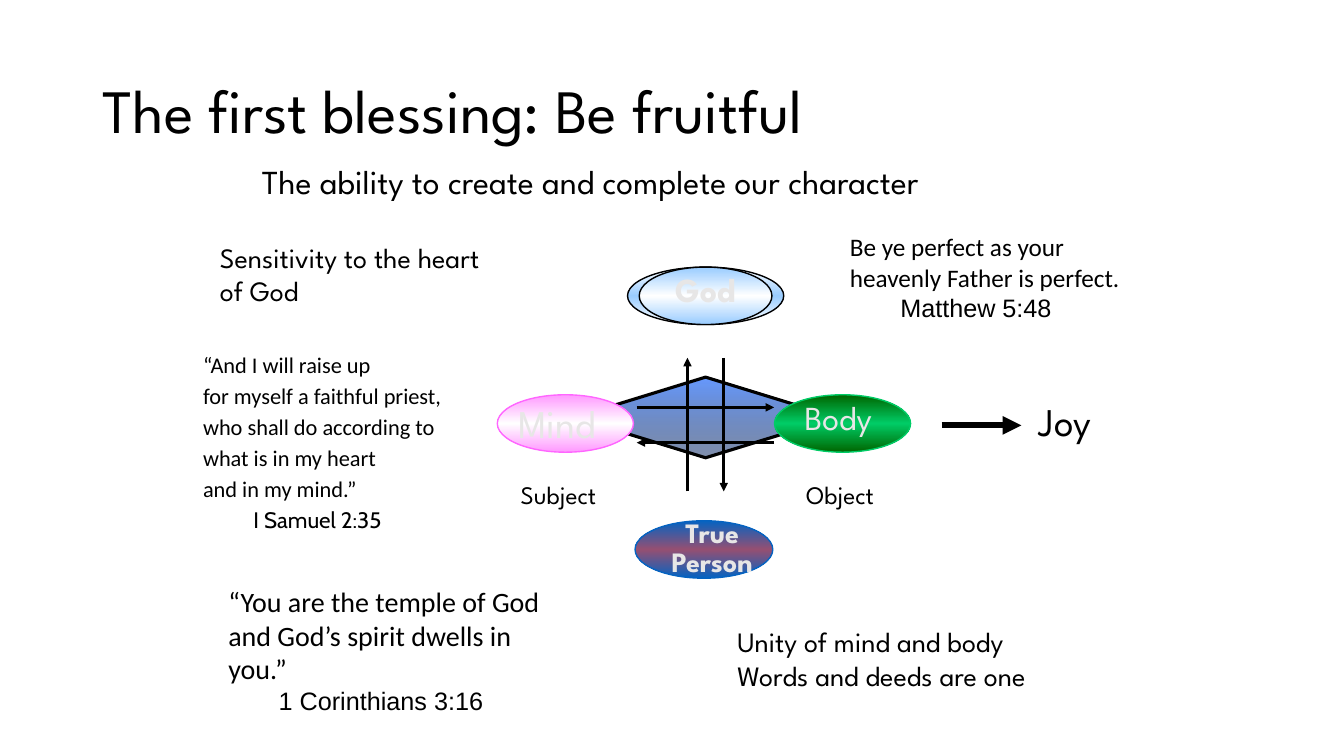
import pptx
import pptx.util
import pptx.dml.color
import pptx.enum.shapes
import pptx.enum.text
import pptx.oxml.ns
import lxml.etree

# Square grid: 160 columns by 90 rows
deck = pptx.Presentation()
deck.slide_width, deck.slide_height = pptx.util.Inches(13.333), pptx.util.Inches(7.5)
cell = deck.slide_height / 90
slide = deck.slides.add_slide(deck.slide_layouts[5])

hex_color = pptx.dml.color.RGBColor.from_string
qn = pptx.oxml.ns.qn
Pt = pptx.util.Pt
SHAPES = pptx.enum.shapes.MSO_SHAPE
ALIGN = pptx.enum.text.PP_ALIGN
AUTO = pptx.enum.text.MSO_AUTO_SIZE
HEADING = "League Spartan"
PALE = "E7E6E6"


def write(frame, paragraphs, size, face=HEADING, color="000000", bold=False, **layout):
    """Each paragraph is a list of parts: text, or (text, face, size)."""
    for number, parts in enumerate(paragraphs):
        paragraph = frame.paragraphs[0] if number == 0 else frame.add_paragraph()
        for name, value in layout.items():
            setattr(paragraph, name, value)
        for part in parts:
            if part == "\n":
                paragraph.add_line_break()
                continue
            words, part_face, part_size = (part, face, size) if isinstance(part, str) else part
            run = paragraph.add_run()
            run.text = words
            run.font.color.rgb = hex_color(color)
            look = {"name": part_face, "size": Pt(part_size), "bold": bold}
            for name, value in look.items():
                setattr(run.font, name, value)


def add_gradient_shape(kind, box, colors, outline, weight, end_alpha=None):
    shape = slide.shapes.add_shape(kind, *[int(v * cell) for v in box])
    shape.shadow.inherit = False
    shape.line.color.rgb = hex_color(outline)
    shape.line.width = Pt(weight)
    shape.fill.gradient()
    shape.fill.gradient_angle = 270
    stops = shape._element.spPr.find(qn("a:gradFill")).find(qn("a:gsLst"))
    for stop in list(stops):
        stops.remove(stop)
    for number, color in enumerate(colors):
        position = number * 100000 // (len(colors) - 1)
        stop = lxml.etree.SubElement(stops, qn("a:gs"), pos=str(position))
        tint = lxml.etree.SubElement(stop, qn("a:srgbClr"), val=color)
    if end_alpha:
        lxml.etree.SubElement(tint, qn("a:alpha"), val=str(end_alpha * 1000))


# Title
title = slide.shapes.title
for name, value in {"left": 11, "top": 4.8, "width": 138, "height": 17.4}.items():
    setattr(title, name, int(value * cell))
title.text_frame.auto_size = AUTO.NONE
title.text_frame.vertical_anchor = pptx.enum.text.MSO_ANCHOR.MIDDLE
write(title.text_frame, [["The first blessing: Be fruitful"]], 44,
      alignment=ALIGN.LEFT, line_spacing=0.9)

# Four-position diagram: diamond, then ellipses by centre, top and width
add_gradient_shape(SHAPES.DIAMOND, (68.4, 44.9, 31.2, 9.6),
                   ["6699FF", "2F4776"], "000000", 2.25, end_alpha=60)
ellipses = [
    (83.8, 62, 16.4, "0563C1", "954F72", "0563C1"),
    (67.3, 47, 16.2, "FF99FF", "FFFFFF", "FF66FF"),
    (100.3, 47, 16.2, "006600", "00CC66", "00CC66"),
    (84, 31.8, 18.6, "FFFFFF", "99CCFF", "000000"),
    (84, 31.8, 15.8, "99CCFF", "FFFFFF", "000000"),
]
for centre, top, width, edge, middle, outline in ellipses:
    add_gradient_shape(SHAPES.OVAL, (centre - width / 2, top, width, 6.84),
                       [edge, middle, edge], outline, 1)

# Give-and-take arrows, and the arrow to joy
arrows = [
    (81.84, 58.5, 81.84, 42.6, 2),
    (86.16, 42.6, 86.16, 58.5, 2),
    (75.8, 48.5, 92.16, 48.5, 2),
    (92.16, 52.7, 75.8, 52.7, 2),
    (112.1, 50.64, 121.6, 50.64, 4.5),
]
for *ends, weight in arrows:
    arrow = slide.shapes.add_connector(pptx.enum.shapes.MSO_CONNECTOR.STRAIGHT,
                                       *[int(v * cell) for v in ends])
    arrow.line.color.rgb = hex_color("000000")
    arrow.line.width = Pt(weight)
    lxml.etree.SubElement(arrow.line._get_or_add_ln(), qn("a:tailEnd"), type="triangle")
    lxml.etree.SubElement(arrow._element.spPr, qn("a:effectLst"))

# Labels and quotations: box, wrap, paragraphs, format
texts = [
    ((77.6, 61.4, 14.4, 8.5), True, [["True Person"]],
     {"size": 20, "color": PALE, "bold": True, "alignment": ALIGN.CENTER, "line_spacing": 0.85}),
    ((60.5, 47, 15, 6.8), True, [["Mind"]], {"size": 28, "color": PALE}),
    ((94.6, 46.6, 12.8, 6.1), True, [["Body"]], {"size": 24, "color": PALE}),
    ((77.3, 31.4, 13.4, 6), True, [["God"]],
     {"size": 24, "color": PALE, "bold": True, "alignment": ALIGN.CENTER}),
    ((60.8, 56.5, 13.7, 4.8), False, [["Subject"]], {"size": 18}),
    ((94.8, 56.5, 12.2, 4.8), False, [["Object"]], {"size": 18}),
    ((122.5, 46.7, 10.4, 6.8), False, [["Joy"]], {"size": 28}),
    ((30, 18.6, 100, 6), True,
     [["The ability to create and complete our character"]], {"size": 24}),
    ((25, 28, 34.9, 9.2), True, [["Sensitivity to the heart of God"]], {"size": 20}),
    ((86.6, 73.8, 43.7, 9.2), False,
     [["Unity of mind and body"], ["Words and deeds are one"]], {"size": 20}),
    ((100, 27, 34.9, 12.1), False,
     [["Be ye perfect as your", "\n", "heavenly Father is perfect."],
      [("\tMatthew 5:48", "Arial", 18)]], {"size": 18, "face": "Calibri"}),
    ((23, 41.2, 31.7, 23.9), False,
     [["“And I will raise up"], ["for myself a faithful priest,"],
      ["who shall do according to"], ["what is in my heart"], ["and in my mind.”"],
      [("\tI Samuel 2:35", "Cabin", 16)]],
     {"size": 16, "face": "Calibri", "space_before": Pt(3)}),
    ((26, 69, 41.5, 17.2), True,
     [["“You are the temple of God and God’s spirit dwells in you.”", "\n",
       ("\t1 Corinthians 3:16", "Arial", 18)]], {"size": 20, "face": "Calibri"}),
]
for box, wrap, paragraphs, look in texts:
    frame = slide.shapes.add_textbox(*[int(v * cell) for v in box]).text_frame
    frame.word_wrap = wrap
    frame.auto_size = AUTO.SHAPE_TO_FIT_TEXT
    write(frame, paragraphs, **look)

deck.save("out.pptx")
